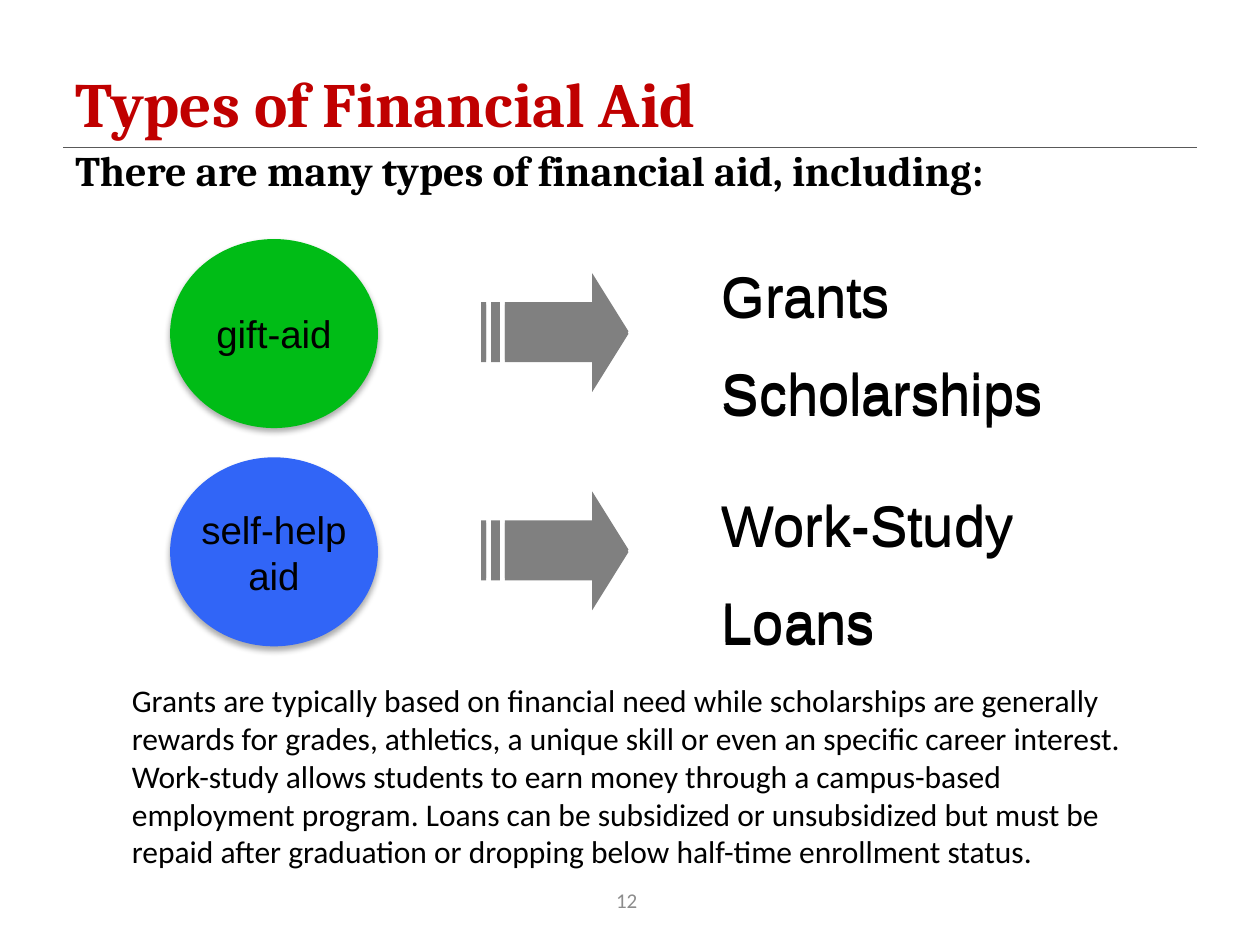
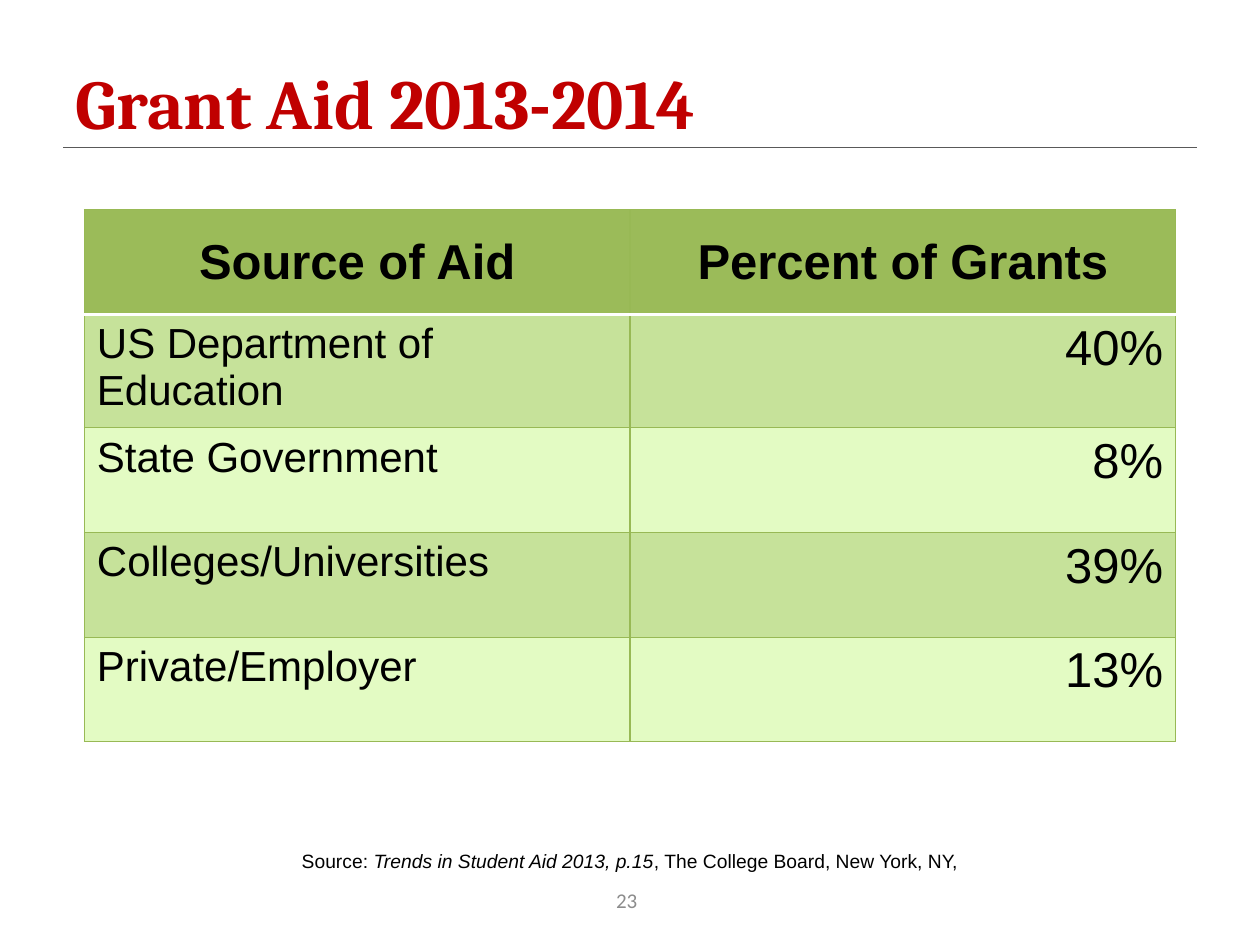
from lxml import etree
from pptx import Presentation
from pptx.dml.color import RGBColor
from pptx.enum.shapes import MSO_CONNECTOR, MSO_SHAPE
from pptx.enum.text import MSO_ANCHOR, PP_ALIGN
from pptx.oxml import parse_xml
from pptx.oxml.ns import nsdecls, qn
from pptx.util import Cm, Pt

LEFT, MID, RIGHT = PP_ALIGN.LEFT, PP_ALIGN.CENTER, PP_ALIGN.RIGHT
TOP, CENTER = MSO_ANCHOR.TOP, MSO_ANCHOR.MIDDLE
OVAL, STRAIGHT = MSO_SHAPE.OVAL, MSO_CONNECTOR.STRAIGHT

BLACK = RGBColor(0, 0, 0)
WHITE = RGBColor(255, 255, 255)
RED = RGBColor(0xC0, 0, 0)
RULE = RGBColor(0x59, 0x59, 0x59)
GRAY = RGBColor(0x80, 0x80, 0x80)
PALE = RGBColor(0x8C, 0x8C, 0x8C)
GREEN = RGBColor(0, 0xBC, 0x16)
BLUE = RGBColor(0x31, 0x65, 0xF7)
HEAD = RGBColor(0x9B, 0xBB, 0x59)
BANDS = RGBColor(0xC6, 0xE2, 0x9A), RGBColor(0xE3, 0xFB, 0xC3)
EDGE = RGBColor(0x98, 0xB9, 0x55)

MARGIN, WIDE = 1.27, 22.86
ECHO = 0.05  # the arrows and the list are doubled, slightly apart

ROWS = [
    ("Source of Aid", "Percent of Grants"),
    ("US Department of Education", "40%"),
    ("State Government", "8%"),
    ("Colleges/Universities", "39%"),
    ("Private/Employer", "13%"),
]
NOTE = (
    "Grants are typically based on financial need while scholarships are "
    "generally rewards for grades, athletics, a unique skill or even an "
    "specific career interest. Work-study allows students to earn money "
    "through a campus-based employment program. Loans can be subsidized or "
    "unsubsidized but must be repaid after graduation or dropping below "
    "half-time enrollment status."
)


def add_run(para, text, size, font="Arial", color=BLACK, bold=False,
            italic=False):
    run = para.add_run()
    run.text = text
    face = run.font
    face.name, face.size, face.bold, face.italic = font, Pt(size), bold, italic
    face.color.rgb = color


def write(frame, lines, size, align=LEFT, gaps=(), **style):
    """Put each line in its own paragraph; gaps are the points above them."""
    for i, line in enumerate(lines):
        para = frame.paragraphs[0] if i == 0 else frame.add_paragraph()
        para.alignment = align
        if i and gaps:
            para.space_before = Pt(gaps[i])
        add_run(para, line, size, **style)


def add_box(slide, x, y, w, h, anchor=TOP):
    frame = slide.shapes.add_textbox(Cm(x), Cm(y), Cm(w), Cm(h)).text_frame
    frame.word_wrap = True
    frame.vertical_anchor = anchor
    return frame


def add_slide(deck, title, size, number):
    """Start a slide with its title, the rule below it and its number."""
    slide = deck.slides.add_slide(deck.slide_layouts[5])
    head = slide.shapes.title
    head.left, head.top = Cm(MARGIN), Cm(1.27)
    head.width, head.height = Cm(WIDE), Cm(1.57)
    head.text_frame.vertical_anchor = CENTER
    write(head.text_frame, [title], size, font="Cambria", color=RED, bold=True)
    rule = slide.shapes.add_connector(
        STRAIGHT, Cm(MARGIN), Cm(2.97), Cm(MARGIN + WIDE), Cm(2.97))
    rule.line.color.rgb = RULE
    rule.line.width = Pt(0.75)
    etree.SubElement(rule._element.spPr, qn("a:effectLst"))
    foot = add_box(slide, 10.31, 17.25, 4.65, 1.8, CENTER)
    write(foot, [number], 12, MID, font="Calibri", color=PALE)
    return slide


def add_disc(slide, y, lines, color):
    disc = slide.shapes.add_shape(OVAL, Cm(3.43), Cm(y), Cm(4.19), Cm(3.81))
    disc.fill.solid()
    disc.fill.fore_color.rgb = color
    disc.line.fill.background()
    disc._element.spPr.append(parse_xml(
        f'<a:effectLst {nsdecls("a")}><a:outerShdw blurRad="{Pt(3.5)}" '
        f'dist="{Pt(2.2)}" dir="5400000" rotWithShape="0">'
        '<a:srgbClr val="000000"><a:alpha val="32000"/></a:srgbClr>'
        '</a:outerShdw></a:effectLst>'))
    frame = disc.text_frame
    frame.word_wrap = False
    frame.vertical_anchor = CENTER
    write(frame, lines, 22, MID)


def add_arrow(slide, x, y):
    """Draw a right arrow with two stripes at its tail."""
    low, high = 0.58, 1.74
    head = [(2.24, 0), (2.24, low), (0.48, low), (0.48, high),
            (2.24, high), (2.24, 2.34), (2.97, 1.17)]
    bars = [[(a, low), (a, high), (b, high), (b, low)]
            for a, b in ((0.2, 0.38), (0, 0.1))]
    pen = slide.shapes.build_freeform(
        Cm(head[0][0]), Cm(head[0][1]), scale=1.0)
    for i, path in enumerate([head] + bars):
        spots = [(Cm(a), Cm(b)) for a, b in path]
        if i:
            pen.move_to(*spots[0])
        pen.add_line_segments(spots[1:], close=True)
    arrow = pen.convert_to_shape(Cm(x), Cm(y))
    arrow.fill.solid()
    arrow.fill.fore_color.rgb = GRAY
    arrow.line.fill.background()
    arrow.shadow.inherit = False


def set_edge(cell, side, color, width):
    cell._tc.get_or_add_tcPr().append(parse_xml(
        f'<a:ln{side} {nsdecls("a")} w="{Pt(width)}"><a:solidFill>'
        f'<a:srgbClr val="{color}"/></a:solidFill></a:ln{side}>'))


def add_grid(slide, rows, x, y, w, high):
    count = len(rows[0])
    grid = slide.shapes.add_table(
        len(rows), count, Cm(x), Cm(y), Cm(w), Cm(high * len(rows))).table
    for r, row in enumerate(rows):
        for c, text in enumerate(row):
            cell = grid.cell(r, c)
            for side in "LRTB":
                white = (r, side) in ((0, "B"), (1, "T"))
                set_edge(cell, side, *((WHITE, 2) if white else (EDGE, 0.75)))
            cell.fill.solid()
            cell.fill.fore_color.rgb = BANDS[(r - 1) % 2] if r else HEAD
            if r:
                align, size = (RIGHT, 28) if c else (LEFT, 24)
            else:
                align, size = MID, 28
                cell.vertical_anchor = CENTER
            write(cell.text_frame, [text], size, align, bold=r == 0)


def add_types(deck):
    slide = add_slide(deck, "Types of Financial Aid", 36, "12")
    write(add_box(slide, MARGIN, 2.79, WIDE, 1.35),
          ["There are many types of financial aid, including:"], 24,
          font="Cambria", bold=True)
    write(add_box(slide, 2.41, 13.61, 21.06, 4.11), [NOTE], 18,
          font="Calibri")
    kinds = [(["gift-aid"], GREEN), (["self-help", "aid"], BLUE)]
    for i, (lines, color) in enumerate(kinds):
        add_disc(slide, 4.82 + 4.4 * i, lines, color)
    for shift in (ECHO, 0):
        for i in range(len(kinds)):
            add_arrow(slide, 9.7, 5.51 + 4.4 * i + shift)
        write(add_box(slide, 14.3, 5.12 + shift, 8.64, 8.3),
              ["Grants", "Scholarships", "Work-Study", "Loans"], 32,
              gaps=(0, 17.5, 36.5, 17.5))


def add_grants(deck):
    slide = add_slide(deck, "Grant Aid 2013-2014", 40, "23")
    add_grid(slide, ROWS, 1.7, 4.23, 22, 2.11)
    para = add_box(slide, 0, 17, 25.4, 0.7).paragraphs[0]
    para.alignment = MID
    add_run(para, "Source: ", 11)
    add_run(para, "Trends in Student Aid 2013, p.15", 11, italic=True)
    add_run(para, ", The College Board, New York, NY,", 11)


def main():
    deck = Presentation()
    deck.slide_width, deck.slide_height = Cm(25.4), Cm(19.05)
    add_types(deck)
    add_grants(deck)
    deck.save("out.pptx")


if __name__ == "__main__":
    main()
